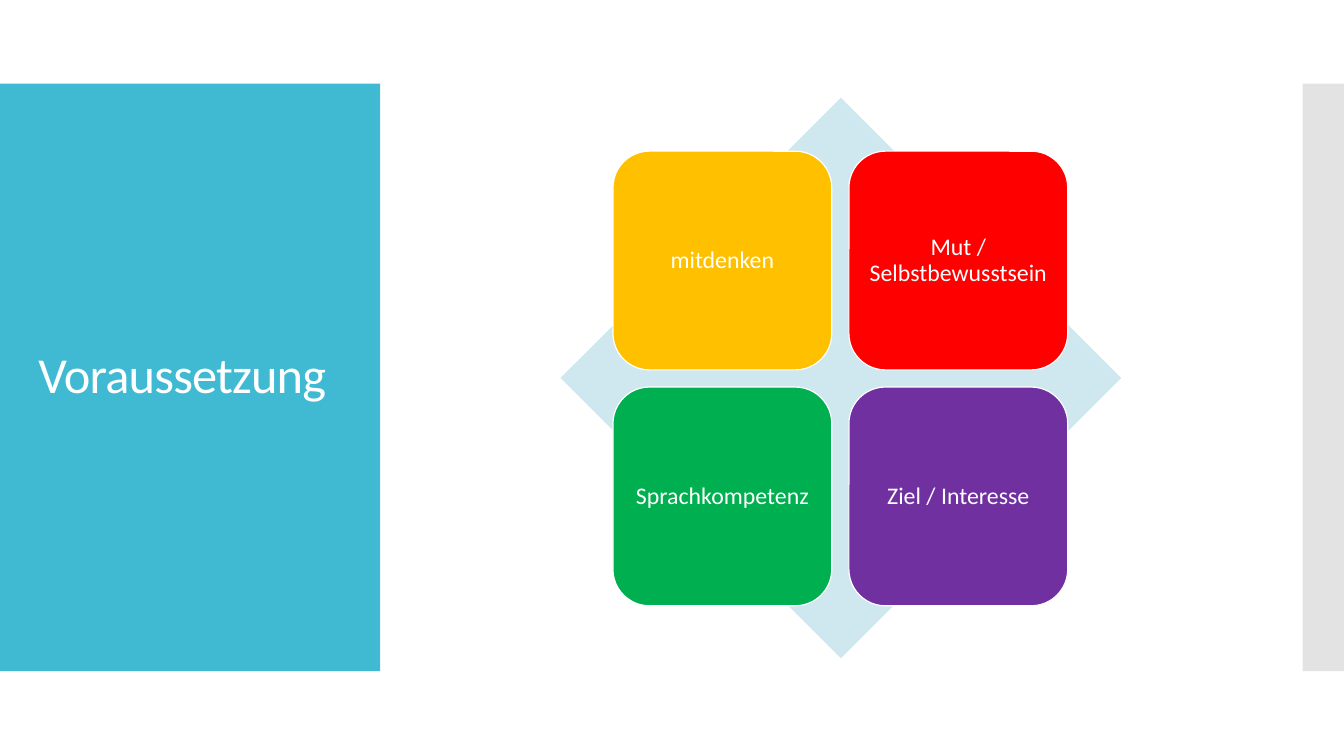
"""Build the slide "Voraussetzung": a title panel and four coloured tiles on a diamond."""
from lxml.etree import SubElement
from pptx import Presentation
from pptx.dml.color import RGBColor as Rgb
from pptx.enum.shapes import MSO_SHAPE as Kind
from pptx.enum.text import MSO_ANCHOR as Anchor, MSO_AUTO_SIZE as Fit, PP_ALIGN as Align
from pptx.oxml.ns import qn
from pptx.util import Inches, Pt

HUES = {
    "white": "FFFFFF", "teal": "40BAD2", "grey": "C8C8C8", "pale": "CFE7EE",
    "gold": "FFC000", "red": "FF0000", "green": "00B050", "violet": "7030A0",
}


def draw(kind, left, top, width, height, hue):
    shape = slide.shapes.add_shape(kind, *map(Inches, (left, top, width, height)))
    shape.shadow.inherit = False
    shape.fill.solid()
    shape.fill.fore_color.rgb = Rgb.from_string(HUES[hue])
    shape.line.fill.background()
    return shape


def write(shape, text, size, align, inset=(0.1, 0.05)):
    frame = shape.text_frame
    frame.text = text
    frame.word_wrap = True
    frame.auto_size = Fit.NONE
    frame.vertical_anchor = Anchor.MIDDLE
    frame.margin_left = frame.margin_right = Inches(inset[0])
    frame.margin_top = frame.margin_bottom = Inches(inset[1])
    para = frame.paragraphs[0]
    para.alignment = align
    para.line_spacing = 0.9
    run = para.runs[0]
    run.font.name = "Calibri"
    run.font.size = Pt(size)
    run.font.color.rgb = Rgb.from_string(HUES["white"])
    return run


deck = Presentation()
deck.slide_width, deck.slide_height = Inches(13.33), Inches(7.5)
slide = deck.slides.add_slide(deck.slide_layouts[5])

draw(Kind.RECTANGLE, 0, 0.83, 3.77, 5.83, "teal")
strip = draw(Kind.RECTANGLE, 12.92, 0.83, 0.41, 5.83, "grey")
tint = strip.fill._xPr.find(qn("a:solidFill"))[0]
SubElement(tint, qn("a:alpha")).set("val", "50000")

title = slide.shapes.title
title.left, title.top, title.width, title.height = map(Inches, (0.28, 1.23, 3.22, 5.03))
run = write(title, "Voraussetzung", 36, Align.LEFT)
run.font._element.set("spc", "-60")
title.element.getparent().append(title.element)

draw(Kind.DIAMOND, 5.56, 0.97, 5.56, 5.56, "pale")

tiles = [
    ("mitdenken", "gold"), ("Mut / Selbstbewusstsein", "red"),
    ("Sprachkompetenz", "green"), ("Ziel / Interesse", "violet"),
]
side, step = 2.17, 2.34
for i, (text, hue) in enumerate(tiles):
    row, col = divmod(i, 2)
    tile = draw(Kind.ROUNDED_RECTANGLE, 6.08 + col * step, 1.5 + row * step, side, side, hue)
    tile.line.color.rgb = Rgb.from_string(HUES["white"])
    tile.line.width = Pt(0.85)
    write(tile, text, 17, Align.CENTER, (0.07, 0.07))

deck.save("out.pptx")
